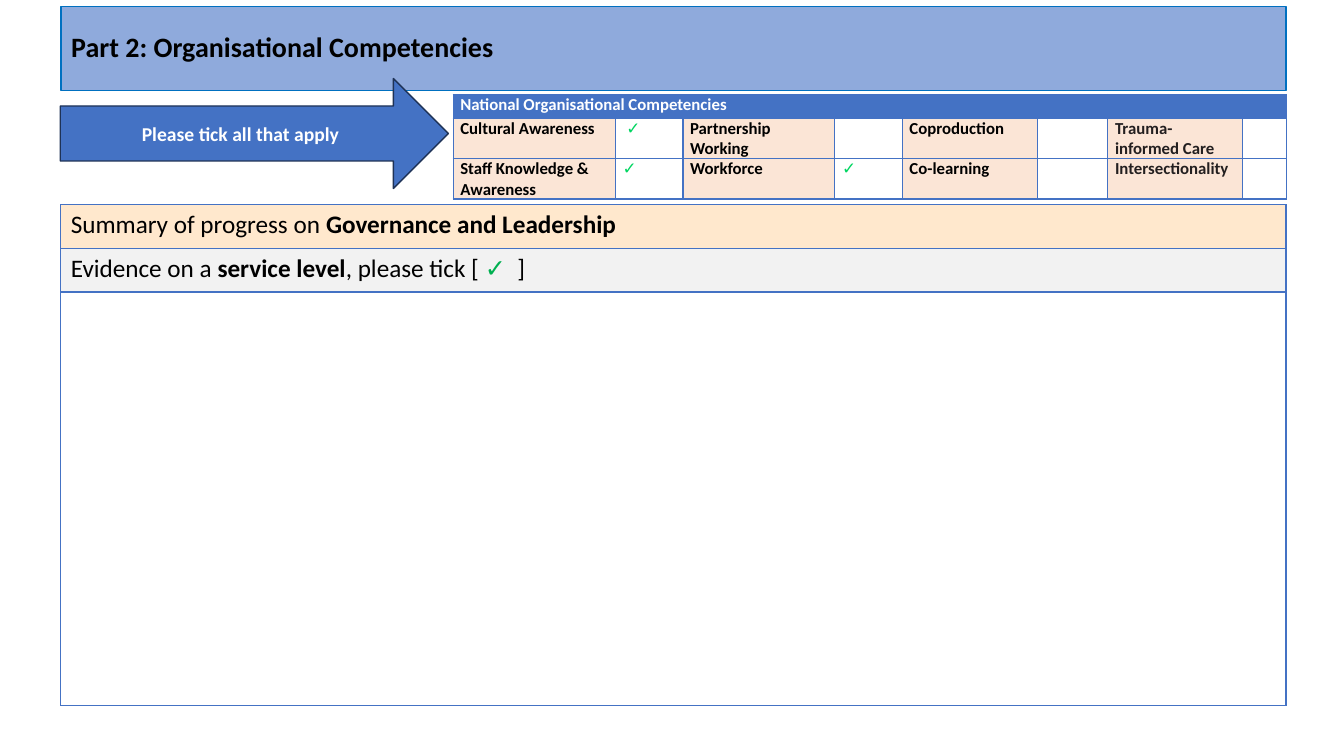
import pptx
import pptx.dml.color
import pptx.enum.shapes
import pptx.enum.text
import pptx.oxml
import pptx.oxml.ns
import pptx.util
from pptx.util import Cm

FONT = "Calibri"
TICK = "✓"
COLOURS = {
    "black": "000000",
    "soft black": "231F20",
    "white": "FFFFFF",
    "banner": "8FAADC",
    "banner edge": "0070C0",
    "blue": "4472C4",
    "arrow edge": "1E3256",
    "peach": "FBE5D6",
    "cream": "FFE8CD",
    "grey": "F2F2F2",
    "green": "00B050",
    "bright green": "00D661",
}
ALIGN = pptx.enum.text.PP_ALIGN


def rgb(colour):
    return pptx.dml.color.RGBColor.from_string(COLOURS[colour])


def paint(shape, fill, edge, width):
    shape.shadow.inherit = False
    shape.fill.solid()
    shape.fill.fore_color.rgb = rgb(fill)
    shape.line.color.rgb = rgb(edge)
    shape.line.width = pptx.util.Pt(width)


def style_paragraph(paragraph, size, colour="black", bold=None, align=ALIGN.LEFT):
    paragraph.alignment = align
    paragraph.font.name = FONT
    paragraph.font.size = pptx.util.Pt(size)
    paragraph.font.color.rgb = rgb(colour)
    paragraph.font.bold = bold


def add_banner(slide, text):
    banner = slide.shapes.title
    banner.left, banner.top = Cm(1.54), Cm(0.71)
    banner.width, banner.height = Cm(30.87), Cm(1.03)
    paint(banner, "banner", "banner edge", 1.25)
    banner.text_frame.text = text
    banner.text_frame.auto_size = pptx.enum.text.MSO_AUTO_SIZE.SHAPE_TO_FIT_TEXT
    banner.text_frame.vertical_anchor = pptx.enum.text.MSO_ANCHOR.MIDDLE
    heading = banner.text_frame.paragraphs[0]
    style_paragraph(heading, 20, bold=True)
    heading.line_spacing = 0.9


def add_arrow(slide, text):
    arrow = slide.shapes.add_shape(
        pptx.enum.shapes.MSO_SHAPE.RIGHT_ARROW, Cm(1.52), Cm(1.98), Cm(9.78), Cm(2.77))
    paint(arrow, "blue", "arrow edge", 1)
    arrow.text_frame.text = text
    arrow.text_frame.vertical_anchor = pptx.enum.text.MSO_ANCHOR.MIDDLE
    style_paragraph(arrow.text_frame.paragraphs[0], 14, "white", True, ALIGN.CENTER)


def add_grid(slide, left, top, widths, heights):
    """Add a plain table with blue borders and no fills."""
    grid = slide.shapes.add_table(len(heights), len(widths), Cm(left), Cm(top),
                                  Cm(sum(widths)), Cm(sum(heights))).table
    grid.first_row = grid.horz_banding = False
    for column, width in zip(grid.columns, widths):
        column.width = Cm(width)
    for row, height in zip(grid.rows, heights):
        row.height = Cm(height)
    for cell in grid.iter_cells():
        properties = cell._tc.get_or_add_tcPr()
        for side in ("lnL", "lnR", "lnT", "lnB"):
            properties.append(pptx.oxml.parse_xml(
                f'<a:{side} {pptx.oxml.ns.nsdecls("a")} w="12700"><a:solidFill>'
                f'<a:srgbClr val="{COLOURS["blue"]}"/></a:solidFill></a:{side}>'))
        cell.fill.background()
    return grid


def fill_cell(cell, fill):
    cell.fill.solid()
    cell.fill.fore_color.rgb = rgb(fill)


def add_competencies(slide):
    grid = add_grid(slide, 11.42, 2.38,
                    [4.09, 1.7, 3.83, 1.7, 3.4, 1.78, 3.4, 1.11], [0.6, 1.01, 1.01])
    for cell in grid.iter_cells():
        cell.margin_left = cell.margin_right = Cm(0.18)
        cell.margin_top = cell.margin_bottom = 0
        style_paragraph(cell.text_frame.paragraphs[0], 12)

    # Heading row
    for column in range(8):
        fill_cell(grid.cell(0, column), "blue")
    heading = grid.cell(0, 0)
    heading.merge(grid.cell(0, 5))
    heading.text = "National Organisational Competencies"
    style_paragraph(heading.text_frame.paragraphs[0], 12, "white", True)

    # Competency names, each followed by its tick box
    competencies = [
        [("Cultural Awareness", " " + TICK), ("Partnership Working", ""),
         ("Coproduction", ""), ("Trauma-informed Care", "")],
        [("Staff Knowledge & Awareness", TICK), ("Workforce", TICK),
         ("Co-learning", ""), ("Intersectionality", "")],
    ]
    for row, entries in enumerate(competencies, start=1):
        for pair, (name, tick) in enumerate(entries):
            label, box = grid.cell(row, 2 * pair), grid.cell(row, 2 * pair + 1)
            fill_cell(label, "peach")
            label.text, box.text = name, tick
            style_paragraph(label.text_frame.paragraphs[0], 12,
                            "soft black" if pair == 3 else "black", True,
                            ALIGN.JUSTIFY if pair else ALIGN.LEFT)
            style_paragraph(box.text_frame.paragraphs[0], 12, "bright green",
                            False, ALIGN.JUSTIFY)


def add_summary(slide):
    grid = add_grid(slide, 1.53, 5.16, [30.88], [1.1, 1.1, 10.41])
    # Each run is its text, bold flag and colour
    lines = [
        ("cream", [("Summary of progress on ", False, "black"),
                   ("Governance and Leadership", True, "black")]),
        ("grey", [("Evidence on a ", False, "black"),
                  ("service level", True, "black"),
                  (", please tick [ ", False, "black"),
                  (TICK, False, "green"),
                  ("  ]", False, "black")]),
    ]
    for row, (fill, runs) in enumerate(lines):
        cell = grid.cell(row, 0)
        fill_cell(cell, fill)
        paragraph = cell.text_frame.paragraphs[0]
        style_paragraph(paragraph, 18)
        for text, bold, colour in runs:
            run = paragraph.add_run()
            run.text = text
            run.font.bold = bold
            run.font.color.rgb = rgb(colour)


def main():
    presentation = pptx.Presentation()
    presentation.slide_width, presentation.slide_height = Cm(33.87), Cm(19.05)
    slide = presentation.slides.add_slide(presentation.slide_layouts[5])

    add_banner(slide, "Part 2: Organisational Competencies")
    add_summary(slide)
    add_competencies(slide)
    add_arrow(slide, "Please tick all that apply")

    presentation.save("out.pptx")


if __name__ == "__main__":
    main()
